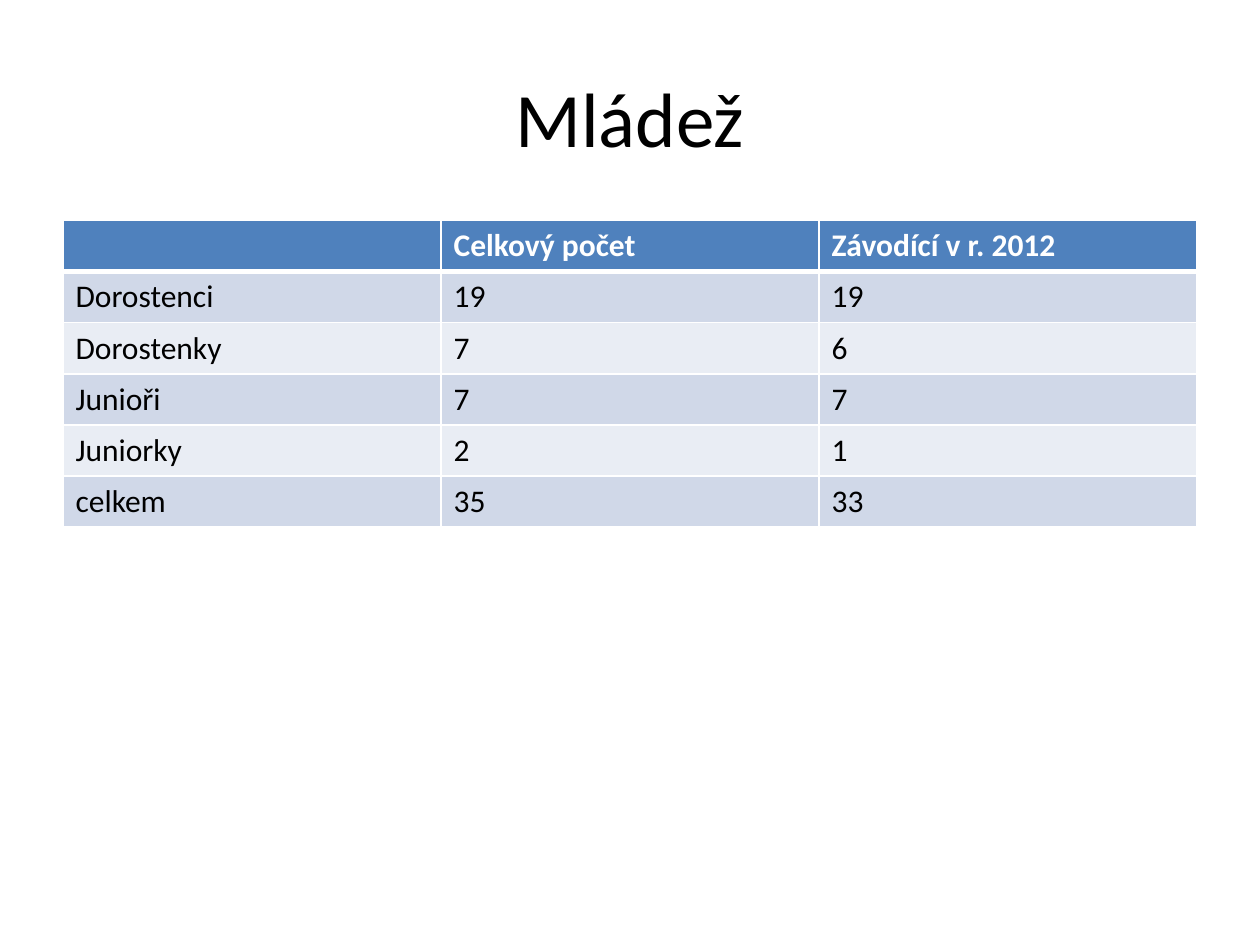
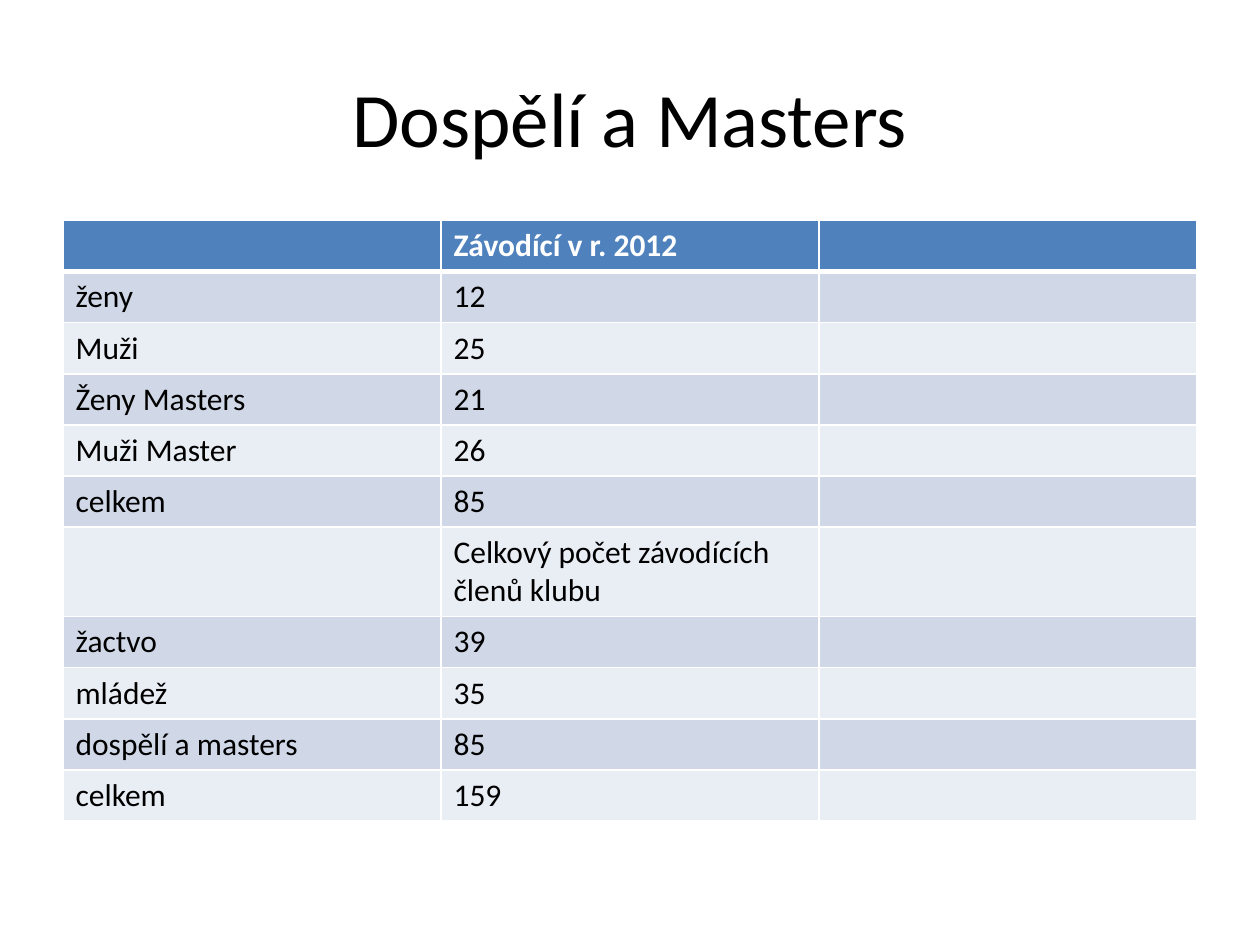
from lxml.etree import SubElement
from pptx import Presentation
from pptx.dml.color import RGBColor
from pptx.enum.text import MSO_ANCHOR, PP_ALIGN
from pptx.oxml.ns import qn
from pptx.util import Inches, Pt

COLORS = {
    "text": "000000",
    "header": "4F81BD",
    "header_text": "FFFFFF",
    "border": "FFFFFF",
    "odd_row": "D0D8E8",
    "even_row": "E9EDF4",
}
FONT = "Calibri"
TITLE_BOX = (0.5, 0.3, 9, 1.25)
TABLE_LEFT, TABLE_TOP, TABLE_WIDTH = 0.5, 1.75, 9
ROW_HEIGHT = 2.43 / 6

YOUTH = [
    ("", "Celkový počet", "Závodící v r. 2012"),
    ("Dorostenci", "19", "19"),
    ("Dorostenky", "7", "6"),
    ("Junioři", "7", "7"),
    ("Juniorky", "2", "1"),
    ("celkem", "35", "33"),
]
ADULTS = [
    ("", "Závodící v r. 2012", ""),
    ("ženy", "12", ""),
    ("Muži", "25", ""),
    ("Ženy Masters", "21", ""),
    ("Muži Master", "26", ""),
    ("celkem", "85", ""),
    ("", "Celkový počet závodících členů klubu", ""),
    ("žactvo", "39", ""),
    ("mládež", "35", ""),
    ("dospělí a masters", "85", ""),
    ("celkem", "159", ""),
]


def write(frame, text, size=18, color="text", bold=False, align=PP_ALIGN.LEFT):
    paragraph = frame.paragraphs[0]
    paragraph.alignment = align
    paragraph.font.size = Pt(size)
    if not text:
        return
    run = paragraph.add_run()
    run.text = text
    run.font.name = FONT
    run.font.size = Pt(size)
    run.font.bold = bold
    run.font.color.rgb = RGBColor.from_string(COLORS[color])


def add_borders(cell, top=1, bottom=1):
    properties = cell._tc.get_or_add_tcPr()
    widths = {"lnL": 1, "lnR": 1, "lnT": top, "lnB": bottom}
    for side, width in widths.items():
        line = SubElement(properties, qn(f"a:{side}"), w=str(Pt(width)))
        fill = SubElement(line, qn("a:solidFill"))
        SubElement(fill, qn("a:srgbClr"), val=COLORS["border"])


def add_title(slide, text, box):
    title = slide.shapes.title
    title.left, title.top, title.width, title.height = map(Inches, box)
    title.text_frame.vertical_anchor = MSO_ANCHOR.MIDDLE
    write(title.text_frame, text, size=44, align=PP_ALIGN.CENTER)


def add_counts(slide, rows, box):
    table = slide.shapes.add_table(len(rows), len(rows[0]), *map(Inches, box)).table
    for row_index, row in enumerate(rows):
        is_header = row_index == 0
        band = "header" if is_header else "odd_row" if row_index % 2 else "even_row"
        for column_index, text in enumerate(row):
            cell = table.cell(row_index, column_index)
            add_borders(cell, top=3 if row_index == 1 else 1, bottom=3 if is_header else 1)
            cell.fill.solid()
            cell.fill.fore_color.rgb = RGBColor.from_string(COLORS[band])
            write(cell.text_frame, text, bold=is_header,
                  color="header_text" if is_header else "text")


def add_count_slide(deck, title, rows):
    slide = deck.slides.add_slide(deck.slide_layouts.get_by_name("Title Only"))
    add_title(slide, title, TITLE_BOX)
    add_counts(slide, rows, (TABLE_LEFT, TABLE_TOP, TABLE_WIDTH, ROW_HEIGHT * len(rows)))


def main():
    deck = Presentation()
    deck.slide_width, deck.slide_height = Inches(10), Inches(7.5)
    add_count_slide(deck, "Mládež", YOUTH)
    add_count_slide(deck, "Dospělí a Masters", ADULTS)
    deck.save("out.pptx")


if __name__ == "__main__":
    main()
